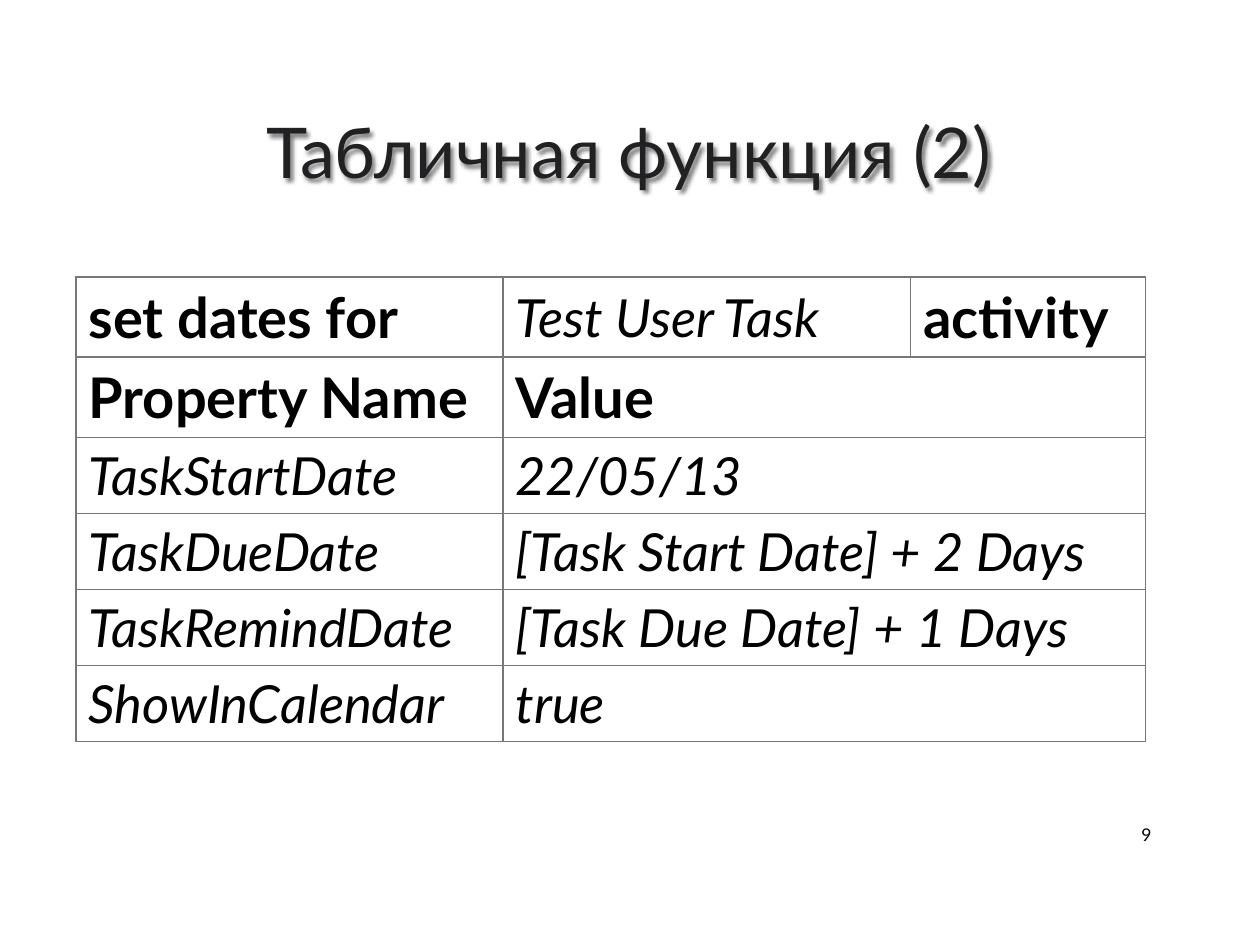
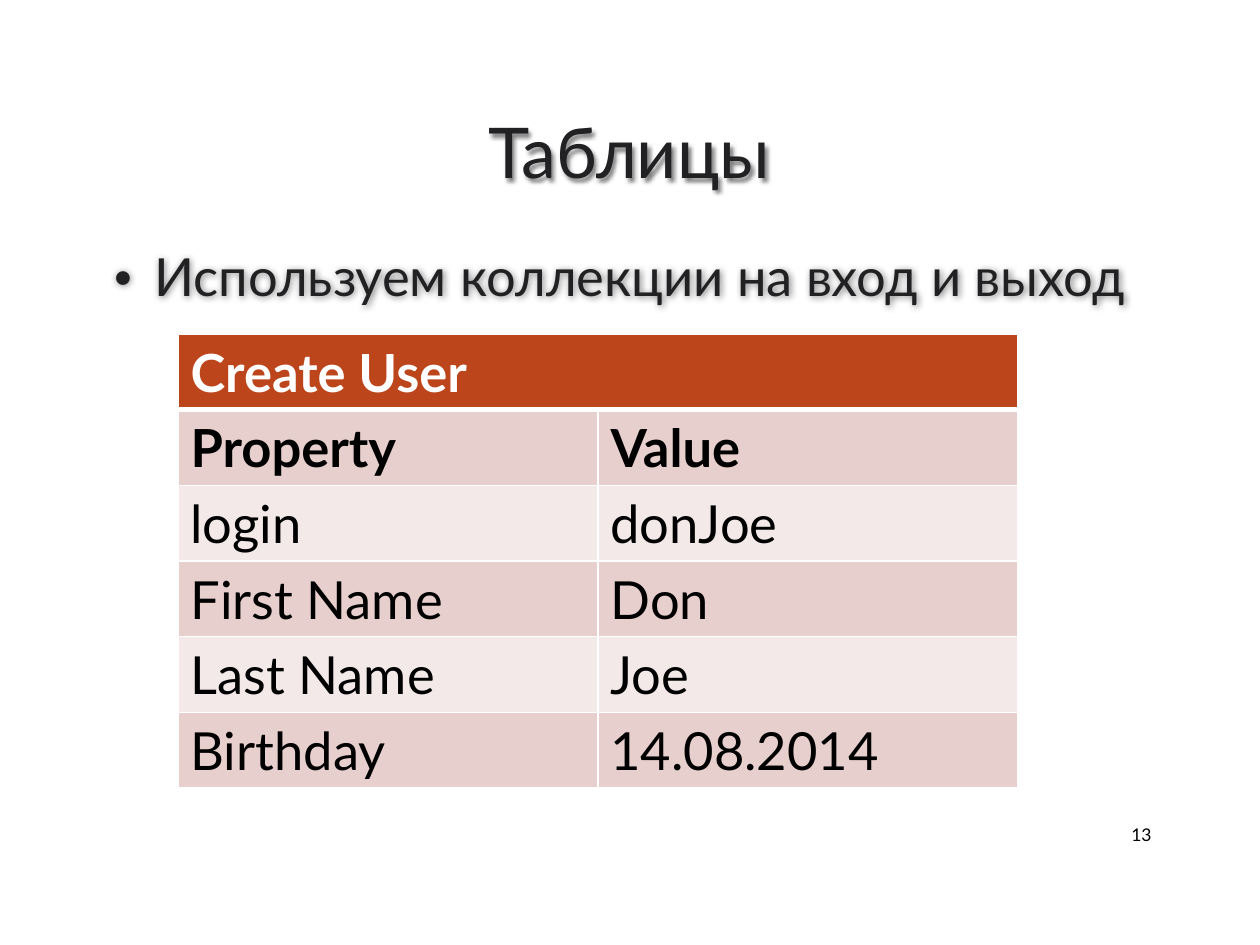
from lxml import etree
from pptx import Presentation
from pptx import util as u
from pptx.dml.color import RGBColor
from pptx.enum import text
from pptx.oxml.ns import qn

PX = 914400 / 126
FONT = "Lato"
BLACK = RGBColor(0x00, 0x00, 0x00)
WHITE = RGBColor(0xFF, 0xFF, 0xFF)
INK = RGBColor(0x21, 0x21, 0x23)
GRID = RGBColor(0x77, 0x77, 0x77)
RUST = RGBColor(0xBC, 0x45, 0x1B)
BANDS = (RGBColor(0xE7, 0xCF, 0xCD), RGBColor(0xF3, 0xE9, 0xE8))

TITLE_BOX = (94, 84, 1070, 134)
BODY_BOX = (94, 238, 1070, 559)
NUMBER_BOX = (1086, 810, 78, 50)

TITLE = dict(size=u.Pt(40), color=INK)
BODY = dict(size=u.Pt(30), color=INK)
NUMBER = dict(size=u.Pt(10))
LABEL = dict(size=u.Pt(32), bold=True)
ENTRY = dict(size=u.Pt(30), italic=True)
HEADER = dict(size=u.Pt(30), bold=True, color=WHITE)
COLUMN_NAME = dict(size=u.Pt(30), bold=True)
PLAIN = dict(size=u.Pt(30))


def px(n):
    return u.Emu(round(n * PX))


def sub(parent, tag, **attrs):
    """Append a DrawingML child element."""
    el = etree.SubElement(parent, qn(tag))
    for key, value in attrs.items():
        el.set(key, str(value))
    return el


def write(tf, words, style, align=text.PP_ALIGN.LEFT):
    p = tf.paragraphs[0]
    p.alignment = align
    r = p.add_run()
    r.text = words
    look = dict(name=FONT, bold=False, italic=False) | style
    r.font.color.rgb = look.pop("color", BLACK)
    for key, value in look.items():
        setattr(r.font, key, value)
    return p


def place(sp, box, anchor):
    for key, value in zip(("left", "top", "width", "height"), box):
        setattr(sp, key, px(value))
    frame = dict(word_wrap=True, auto_size=text.MSO_AUTO_SIZE.NONE,
                 vertical_anchor=anchor)
    for key, value in frame.items():
        setattr(sp.text_frame, key, value)


def add_text(s, box, anchor=text.MSO_ANCHOR.TOP):
    sp = s.shapes.add_textbox(0, 0, 0, 0)
    place(sp, box, anchor)
    return sp


def cast_shadow(sp, blur, dist):
    """Give an unfilled text shape a soft shadow behind its letters."""
    effects = sub(sp._element.spPr, "a:effectLst")
    shadow = sub(effects, "a:outerShdw", blurRad=u.Pt(blur), dist=u.Pt(dist),
                 dir=2700000, algn="tl", rotWithShape=0)
    sub(sub(shadow, "a:srgbClr", val=BLACK), "a:alpha", val=50000)


def add_slide(prs, title, number):
    s = prs.slides.add_slide(prs.slide_layouts[5])
    sp = s.shapes.title
    place(sp, TITLE_BOX, text.MSO_ANCHOR.MIDDLE)
    write(sp.text_frame, title, TITLE, text.PP_ALIGN.CENTER)
    cast_shadow(sp, blur=2, dist=2)
    sp = add_text(s, NUMBER_BOX, text.MSO_ANCHOR.MIDDLE)
    write(sp.text_frame, number, NUMBER, text.PP_ALIGN.RIGHT)
    return s


def add_bullet(s, words):
    sp = add_text(s, BODY_BOX)
    p = write(sp.text_frame, words, BODY)
    p.space_after = u.Pt(6)
    pPr = p._p.get_or_add_pPr()
    pPr.set("marL", str(px(48)))
    pPr.set("indent", str(px(-42)))
    sub(sub(pPr, "a:buClr"), "a:srgbClr", val=INK)
    sub(pPr, "a:buSzPct", val=70000)
    sub(pPr, "a:buFont", typeface=FONT)
    sub(pPr, "a:buChar", char="•")
    cast_shadow(sp, blur=4, dist=1)


def set_borders(cell, color, **widths):
    """Draw the four sides; widths are points keyed by L, R, T and B."""
    tcPr = cell._tc.get_or_add_tcPr()
    for side in "LRTB":
        ln = sub(tcPr, f"a:ln{side}", w=u.Pt(widths[side]))
        sub(sub(ln, "a:solidFill"), "a:srgbClr", val=color)


def add_table(s, left, top, cols, heights, rows, anchor, decorate):
    """Rows hold (words, style) pairs; the last pair spans what remains."""
    frame = s.shapes.add_table(len(rows), len(cols), px(left), px(top),
                               px(sum(cols)), px(sum(heights)))
    table = frame.table
    table.first_row = table.horz_banding = False
    for col, width in zip(table.columns, cols):
        col.width = px(width)
    for i, (row, height) in enumerate(zip(rows, heights)):
        table.rows[i].height = px(height)
        for j in range(len(cols)):
            decorate(table.cell(i, j), i)
        for j, (words, style) in enumerate(row):
            cell = table.cell(i, j)
            cell.vertical_anchor = anchor
            write(cell.text_frame, words, style)
        if len(row) < len(cols):
            table.cell(i, len(row) - 1).merge(table.cell(i, len(cols) - 1))


def grid_cell(cell, row):
    set_borders(cell, GRID, **dict.fromkeys("LRTB", 0.75))
    cell.fill.background()


def banded_cell(cell, row):
    set_borders(cell, WHITE, L=1, R=1, T=3 if row == 1 else 1,
                B=3 if row == 0 else 1)
    cell.fill.solid()
    cell.fill.fore_color.rgb = BANDS[(row - 1) % 2] if row else RUST


def styled(style, *rows):
    return [[(words, style) for words in row] for row in rows]


def add_dates_table(s):
    rows = [[("set dates for", LABEL), ("Test User Task", ENTRY),
             ("activity", LABEL)]]
    rows += styled(LABEL, ("Property Name", "Value"))
    rows += styled(ENTRY,
                   ("TaskStartDate", "22/05/13"),
                   ("TaskDueDate", "[Task Start Date] + 2 Days"),
                   ("TaskRemindDate", "[Task Due Date] + 1 Days"),
                   ("ShowInCalendar", "true"))
    add_table(s, 76, 277, (427, 408, 235), [80] * 2 + [76] * 4, rows,
              text.MSO_ANCHOR.MIDDLE, grid_cell)


def add_user_table(s):
    rows = styled(HEADER, ("Create User",))
    rows += styled(COLUMN_NAME, ("Property", "Value"))
    rows += styled(PLAIN,
                   ("login", "donJoe"),
                   ("First Name", "Don"),
                   ("Last Name", "Joe"),
                   ("Birthday", "14.08.2014"))
    add_table(s, 178, 334, (420, 420), [75] * 6, rows,
              text.MSO_ANCHOR.TOP, banded_cell)


def main():
    prs = Presentation()
    prs.slide_width, prs.slide_height = px(1260), px(945)

    s = add_slide(prs, "Табличная функция (2)", "9")
    add_dates_table(s)

    s = add_slide(prs, "Таблицы", "13")
    add_bullet(s, "Используем коллекции на вход и выход")
    add_user_table(s)

    prs.save("out.pptx")


if __name__ == "__main__":
    main()
